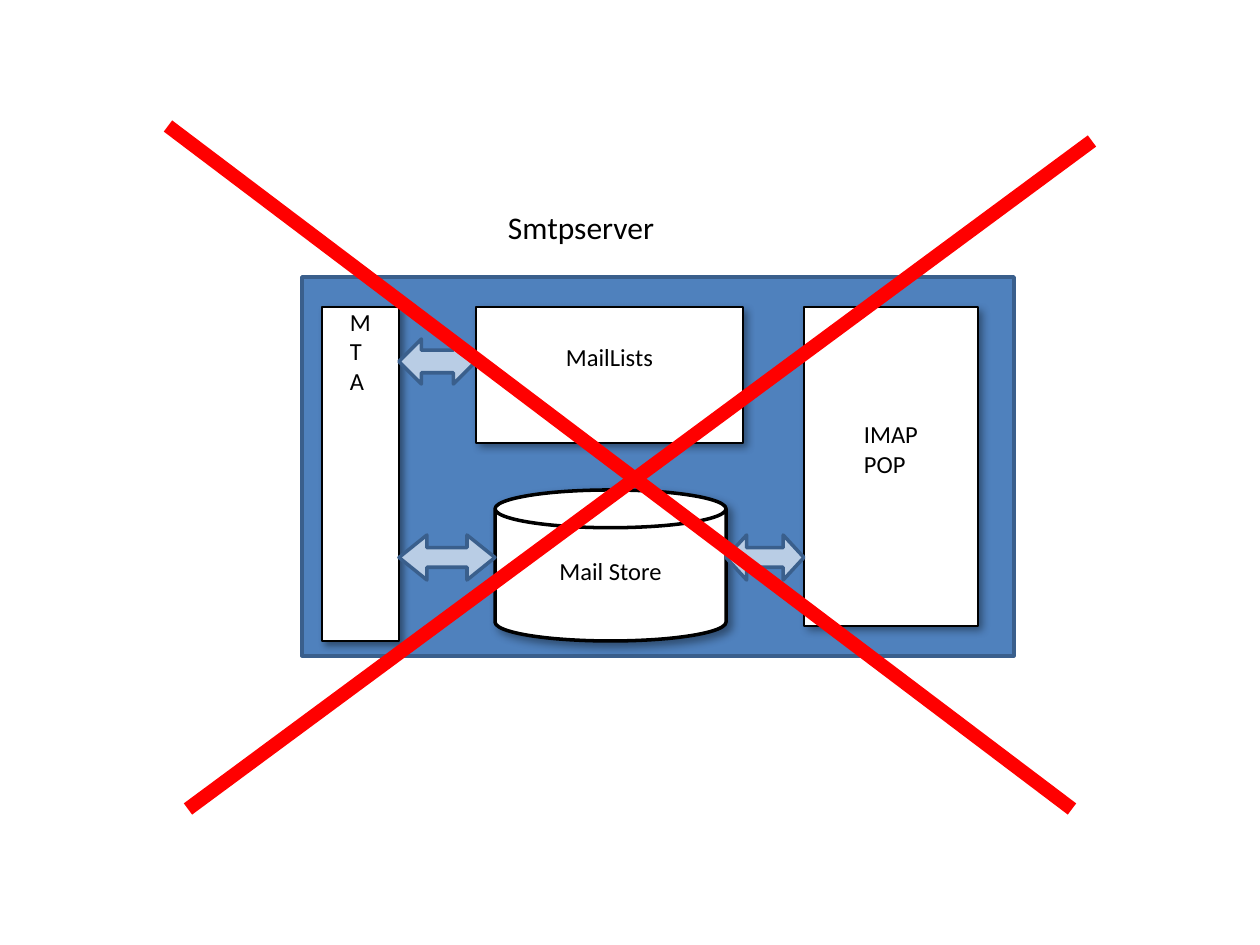
from lxml.etree import SubElement
from pptx import Presentation
from pptx.dml.color import RGBColor
from pptx.enum.shapes import MSO_CONNECTOR, MSO_SHAPE
from pptx.enum.text import MSO_ANCHOR, PP_ALIGN
from pptx.oxml.ns import qn
from pptx.util import Pt

BLUE = RGBColor(0x4F, 0x81, 0xBD)
DARK_BLUE = RGBColor(0x3A, 0x5F, 0x8C)
PALE_BLUE = RGBColor(0xB9, 0xCD, 0xE5)
WHITE = RGBColor(0xFF, 0xFF, 0xFF)
BLACK = RGBColor(0, 0, 0)
RED = RGBColor(0xFF, 0, 0)

SERVER = (302, 277, 712, 379)
MTA = (322, 307, 77, 334)
LISTS = (476, 307, 267, 136)
STORE = (495, 490, 231, 151)
ACCESS = (804, 307, 174, 319)
TITLE = (495, 202, 315, 73)
ARROW_H = 45
ARROWS = [
    (MTA, LISTS, 339, (0.5, 0.5)),
    (MTA, STORE, 535, (0.434, 0.621)),
    (STORE, ACCESS, 535, (0.434, 0.46)),
]
CROSS = [(168, 126, 1072, 809), (188, 809, 1092, 141)]


def px(n):
    return round(n * 914400 / 126)


def add_shadow(sp, blur):
    effects = sp.element.spPr.find(qn("a:effectLst"))
    shadow = SubElement(effects, qn("a:outerShdw"), blurRad=str(Pt(blur)),
                        dist=str(Pt(3)), dir="2700000", rotWithShape="0")
    color = SubElement(shadow, qn("a:srgbClr"), val="000000")
    SubElement(color, qn("a:alpha"), val="40000")


def add_box(kind, box, fill, line, width, blur=None):
    sp = slide.shapes.add_shape(kind, *map(px, box))
    sp.shadow.inherit = False
    sp.fill.solid()
    sp.fill.fore_color.rgb = fill
    sp.line.color.rgb = line
    sp.line.width = Pt(width)
    if blur:
        add_shadow(sp, blur)
    return sp


def set_text(sp, text, size=14, align=PP_ALIGN.LEFT, anchor=MSO_ANCHOR.MIDDLE,
             insets=(13, 6, 13, 6), center_block=False, vert=None):
    tf = sp.text_frame
    tf.word_wrap = True
    tf.vertical_anchor = anchor
    tf.margin_left, tf.margin_top, tf.margin_right, tf.margin_bottom = map(px, insets)
    body = sp.element.txBody.bodyPr
    if center_block:
        body.set("anchorCtr", "1")
    if vert:
        body.set("vert", vert)
    tf.text = text
    for p in tf.paragraphs:
        p.alignment = align
        p.font.name = "Calibri"
        p.font.size = Pt(size)
        p.font.color.rgb = BLACK


def add_arrow(left, right, top, adj):
    x = left[0] + left[2]
    sp = add_box(MSO_SHAPE.LEFT_RIGHT_ARROW, (x, top, right[0] - x, ARROW_H),
                 PALE_BLUE, DARK_BLUE, 2)
    for i, value in enumerate(adj):
        sp.adjustments[i] = value


prs = Presentation()
prs.slide_width, prs.slide_height = px(1260), px(945)
slide = prs.slides.add_slide(prs.slide_layouts[6])

add_box(MSO_SHAPE.RECTANGLE, SERVER, BLUE, DARK_BLUE, 2)
mta = add_box(MSO_SHAPE.RECTANGLE, MTA, WHITE, BLACK, 0.75, blur=4)
set_text(mta, "MTA", anchor=MSO_ANCHOR.TOP, insets=(0, 0, 0, 0),
         center_block=True, vert="wordArtVert")
for box, text in [(LISTS, "MailLists"), (ACCESS, "IMAP\nPOP")]:
    sp = add_box(MSO_SHAPE.RECTANGLE, box, WHITE, BLACK, 0.75, blur=5)
    set_text(sp, text, insets=(13, 6, 13, 42), center_block=True)
store = add_box(MSO_SHAPE.CAN, STORE, WHITE, BLACK, 2, blur=5)
store.adjustments[0] = 0.25
set_text(store, "Mail Store", align=PP_ALIGN.CENTER, insets=(0, 25, 0, 34))
for arrow in ARROWS:
    add_arrow(*arrow)

title = slide.shapes.add_textbox(*map(px, TITLE))
set_text(title, "Smtpserver", size=18, anchor=MSO_ANCHOR.TOP)

for ends in CROSS:
    line = slide.shapes.add_connector(MSO_CONNECTOR.STRAIGHT, *map(px, ends))
    line.line.color.rgb = RED
    line.line.width = Pt(8)
    SubElement(line.element.spPr, qn("a:effectLst"))

prs.save("out.pptx")
